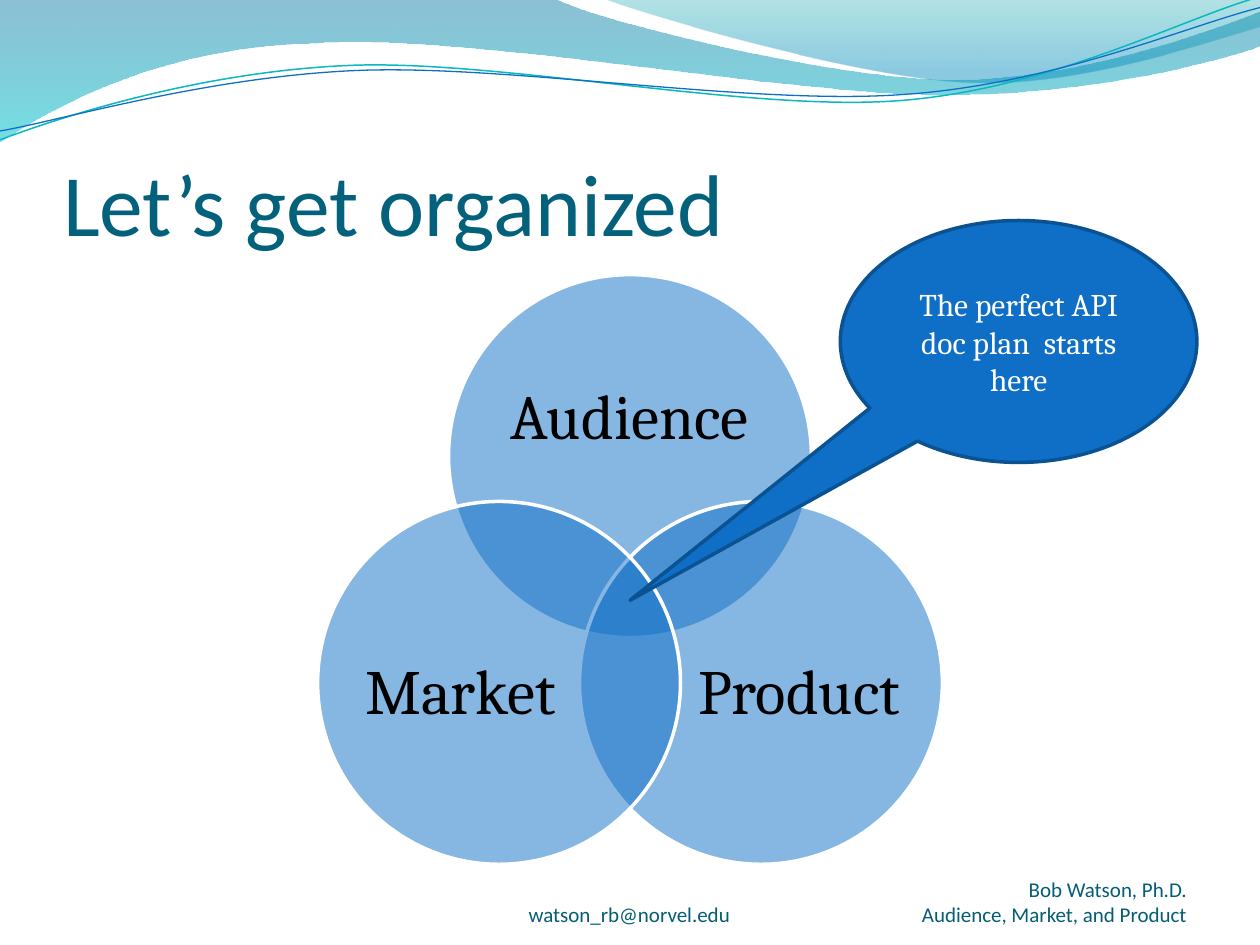
import math

import pptx
import pptx.dml.color
import pptx.enum.shapes
import pptx.enum.text
import pptx.oxml
import pptx.oxml.ns
import pptx.util

RGB = pptx.dml.color.RGBColor
SHAPE = pptx.enum.shapes.MSO_SHAPE
ALIGN = pptx.enum.text.PP_ALIGN
ANCHOR = pptx.enum.text.MSO_ANCHOR
AUTO_SIZE = pptx.enum.text.MSO_AUTO_SIZE

BLUE = RGB(0x0F, 0x6F, 0xC6)
DARK_BLUE = RGB(0x0B, 0x52, 0x92)
TEAL_LINE = RGB(0x0A, 0xB8, 0xBF)
TITLE_TEAL = RGB(0x04, 0x61, 0x7B)
FOOTER_TEAL = RGB(0x04, 0x5D, 0x75)
WAVE_BLUE = RGB(0x00, 0x74, 0xA1)
WAVE_CYAN = RGB(0x00, 0xC6, 0xCF)
CREST_GREEN = RGB(0x00, 0xA1, 0xA9)
CREST_BLUE = RGB(0x00, 0x8B, 0xBF)
WHITE = RGB(0xFF, 0xFF, 0xFF)
BLACK = RGB(0, 0, 0)

BACK_WAVE = [
    (0, 0), (4.4, -0.01), (4.76, 0.17, 6.64, 0.63, 7.58, 0.63),
    (8.53, 0.63, 9.58, 0.26, 10, 0.09), (10.01, 0.36),
    (9.83, 0.44, 8.7, 0.76, 7.46, 0.75), (6.22, 0.75, 3.82, 0.28, 2.57, 0.34),
    (1.29, 0.36, 0.46, 0.83, -0.01, 1.13), (0, 0),
]
FRONT_WAVE = [
    (4.79, -0.01), (5.09, 0.11, 6.82, 0.62, 7.69, 0.65),
    (8.56, 0.69, 9.61, 0.32, 10, 0.21), (10, 0), (4.79, -0.01),
]
TEAL_CURVE = [
    (0, 1.11), (0.48, 0.93, 1.58, 0.57, 2.77, 0.52),
    (3.95, 0.47, 5.93, 0.89, 7.13, 0.8), (8.33, 0.71, 9.38, 0.15, 9.98, -0.02),
]
BLUE_CURVE = [
    (0, 1.04), (0.47, 0.96, 1.64, 0.61, 2.83, 0.56),
    (4.03, 0.51, 5.97, 0.84, 7.17, 0.75), (8.36, 0.67, 9.41, 0.21, 10, 0.06),
]


def write(tf, text, font="Cambria", size=18, color=BLACK, align=ALIGN.CENTER,
          anchor=ANCHOR.TOP, wrap=True, fit=AUTO_SIZE.NONE, insets=None, spacing=None):
    tf.word_wrap = wrap
    tf.auto_size = fit
    tf.vertical_anchor = anchor
    if insets:
        tf.margin_left, tf.margin_top, tf.margin_right, tf.margin_bottom = map(
            pptx.util.Inches, insets)
    p = tf.paragraphs[0]
    p.text = text
    p.alignment = align
    if spacing:
        p.line_spacing = spacing
    for r in p.runs:
        r.font.name = font
        r.font.size = pptx.util.Pt(size)
        r.font.color.rgb = color


def set_alpha(fill, percents):
    colors = fill._xPr.iter(pptx.oxml.ns.qn("a:srgbClr"))
    for color, percent in zip(colors, percents):
        alpha = pptx.oxml.parse_xml(
            f'<a:alpha {pptx.oxml.ns.nsdecls("a")} val="{percent * 1000}"/>')
        color.append(alpha)


def bend(sp, parts):
    lines = iter(list(sp._element.iter(pptx.oxml.ns.qn("a:lnTo"))))
    for part in parts:
        group = [next(lines) for _ in range(len(part) // 2)]
        if len(group) == 3:
            curve = pptx.oxml.parse_xml(
                f'<a:cubicBezTo {pptx.oxml.ns.nsdecls("a")}/>')
            group[0].addprevious(curve)
            for line in group:
                curve.append(line[0])
                line.getparent().remove(line)


class Deck:
    """Holds the grid, the presentation and the current slide."""

    cols, rows = 10, 7.5

    def __init__(self):
        self.prs = pptx.Presentation()
        self.prs.slide_width = pptx.util.Inches(10)
        self.prs.slide_height = pptx.util.Inches(7.5)
        self.s = self.prs.slides.add_slide(self.prs.slide_layouts[5])

    def x(self, col):
        return round(self.prs.slide_width * col / self.cols)

    def y(self, row):
        return round(self.prs.slide_height * row / self.rows)

    def box(self, left, top, width, height):
        return self.x(left), self.y(top), self.x(width), self.y(height)

    def title(self, text, *at):
        sp = self.s.shapes.title
        sp.left, sp.top, sp.width, sp.height = self.box(*at)
        write(sp.text_frame, text, font="Calibri", size=50, color=TITLE_TEAL,
              align=ALIGN.LEFT, anchor=ANCHOR.BOTTOM, insets=(0, 0.05, 0, 0))

    def text(self, text, *at, **style):
        write(self.s.shapes.add_textbox(*self.box(*at)).text_frame, text, **style)

    def shape(self, kind, *at, fill, line):
        sp = self.s.shapes.add_shape(kind, *self.box(*at))
        sp.shadow.inherit = False
        sp.fill.solid()
        sp.fill.fore_color.rgb = fill
        sp.line.color.rgb = line
        sp.line.width = pptx.util.Pt(2)
        return sp

    def outline(self, parts, closed):
        points = [(self.x(col), self.y(row)) for part in parts
                  for col, row in zip(part[::2], part[1::2])]
        builder = self.s.shapes.build_freeform(*points[0])
        builder.add_line_segments(points[1:], close=closed)
        sp = builder.convert_to_shape()
        bend(sp, parts[1:])
        sp.shadow.inherit = False
        return sp

    def wave(self, parts, stops):
        sp = self.outline(parts, True)
        sp.line.fill.background()
        sp.fill.gradient()
        sp.fill.gradient_angle = 270
        for stop, (position, color, _) in zip(sp.fill.gradient_stops, stops):
            stop.position = position
            stop.color.rgb = color
        set_alpha(sp.fill, [alpha for _, _, alpha in stops])

    def curve(self, parts, color, width):
        sp = self.outline(parts, False)
        sp.fill.background()
        sp.line.color.rgb = color
        sp.line.width = pptx.util.Pt(width)

    def circle(self, col, row, radius):
        sp = self.shape(SHAPE.OVAL, col - radius, row - radius, 2 * radius, 2 * radius,
                        fill=BLUE, line=WHITE)
        set_alpha(sp.fill, [50])

    def callout(self, text, *at, tip):
        sp = self.shape(SHAPE.OVAL_CALLOUT, *at, fill=BLUE, line=DARK_BLUE)
        sp.adjustments[0], sp.adjustments[1] = tip
        write(sp.text_frame, text, color=WHITE, anchor=ANCHOR.MIDDLE)


def main():
    deck = Deck()
    deck.wave(BACK_WAVE, [(0, WAVE_BLUE, 45), (1, WAVE_CYAN, 55)])
    deck.wave(FRONT_WAVE, [(0, CREST_GREEN, 30), (0.8, CREST_BLUE, 45)])
    deck.curve(TEAL_CURVE, TEAL_LINE, 0.85)
    deck.curve(BLUE_CURVE, BLUE, 0.75)

    footer = dict(font="Calibri", size=12, color=FOOTER_TEAL, wrap=False,
                  fit=AUTO_SIZE.SHAPE_TO_FIT_TEXT)
    deck.text("Bob Watson, Ph.D.\vAudience, Market, and Product",
              7.19, 6.91, 2.33, 0.5, align=ALIGN.RIGHT, **footer)
    deck.text("watson_rb@norvel.edu", 4.07, 7.11, 1.85, 0.3, **footer)
    deck.title("Let’s get organized", 0.5, 0.77, 9, 1.25)

    venn = [
        ("Audience", -90, (3.94, 2.68, 2.11, 1.3)),
        ("Product", 30, (5.48, 4.72, 1.73, 1.58)),
        ("Market", 150, (2.79, 4.72, 1.73, 1.58)),
    ]
    for name, degrees, label in venn:
        angle = math.radians(degrees)
        deck.circle(5 + 1.2 * math.cos(angle), 4.82 + 1.2 * math.sin(angle), 1.44)
        deck.text(name, *label, size=36, anchor=ANCHOR.MIDDLE,
                  insets=(0, 0, 0, 0), spacing=0.9)

    deck.callout("The perfect API doc plan  starts here", 6.67, 1.75, 2.83, 1.92,
                 tip=(-1.09, 1.07))
    deck.prs.save("out.pptx")


if __name__ == "__main__":
    main()
